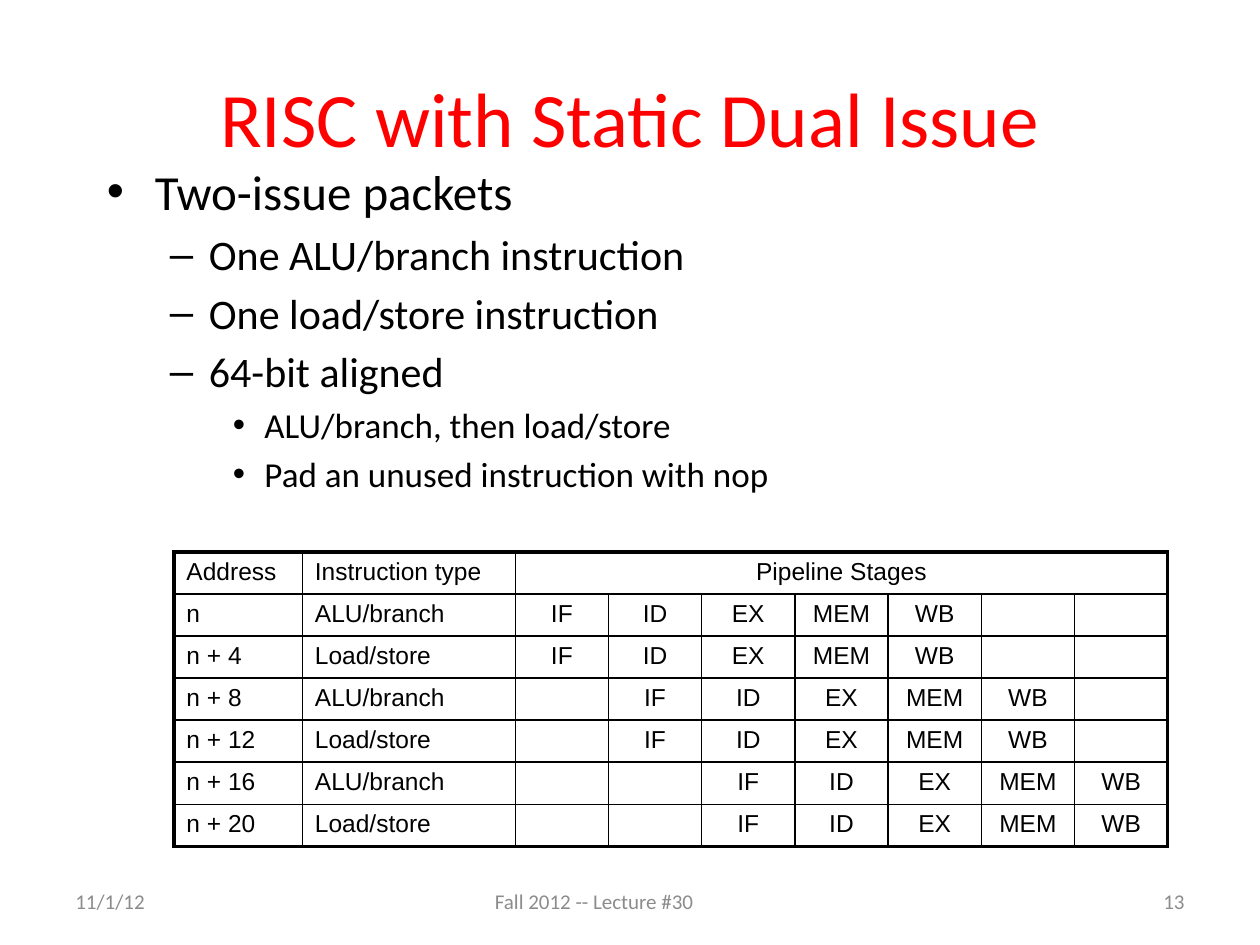
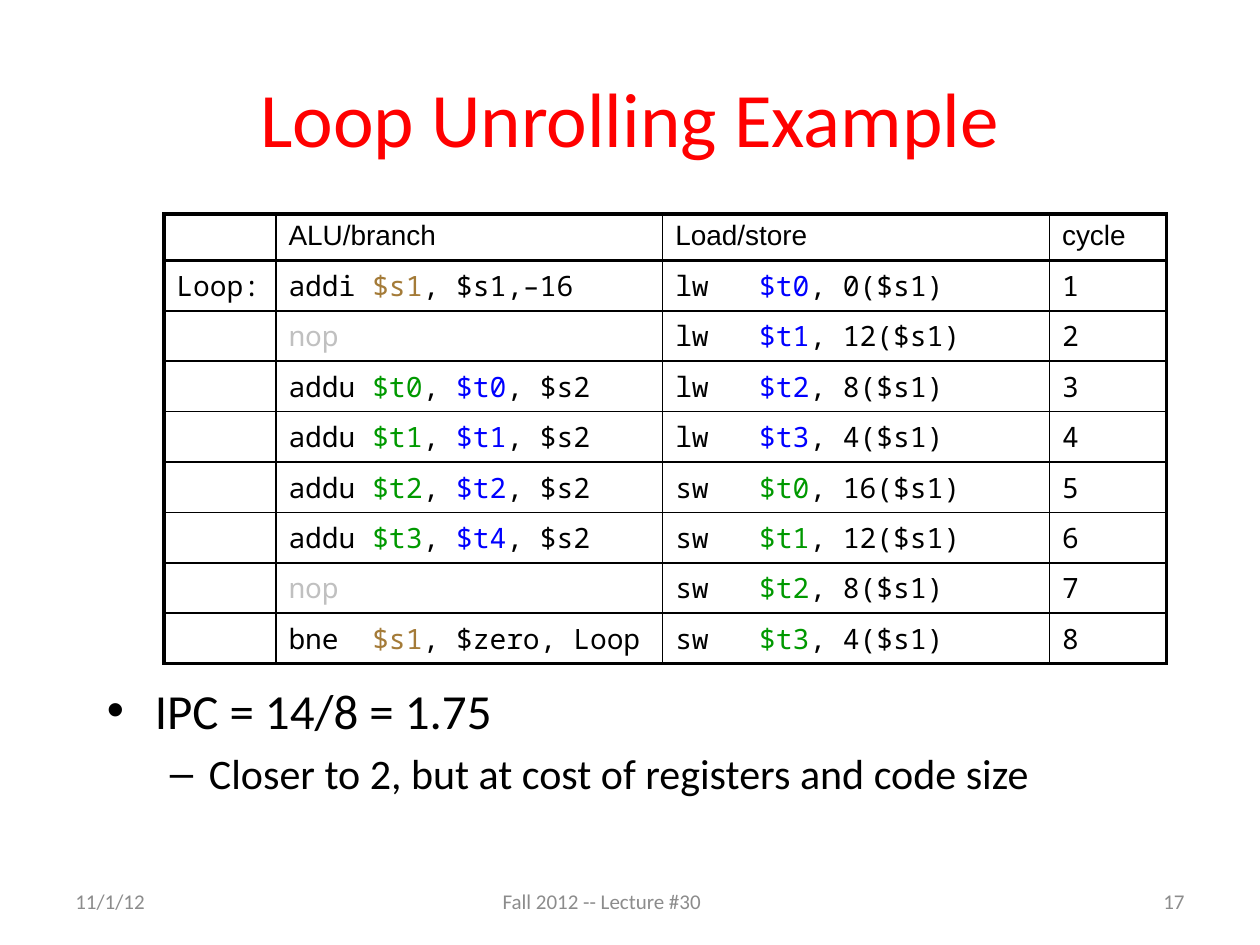
from lxml import etree
from pptx import Presentation
from pptx.dml.color import RGBColor
from pptx.enum.text import MSO_ANCHOR, PP_ALIGN
from pptx.oxml.ns import qn
from pptx.util import Inches, Pt

LEFT, CENTER, RIGHT = PP_ALIGN.LEFT, PP_ALIGN.CENTER, PP_ALIGN.RIGHT
TOP, MIDDLE = MSO_ANCHOR.TOP, MSO_ANCHOR.MIDDLE

BLACK = RGBColor(0x00, 0x00, 0x00)
RED = RGBColor(0xFF, 0x00, 0x00)
GRAY = RGBColor(0x8C, 0x8C, 0x8C)
CODE_COLORS = {
    "o": RGBColor(0xA4, 0x7B, 0x38),
    "b": RGBColor(0x00, 0x00, 0xFF),
    "g": RGBColor(0x00, 0x99, 0x00),
    "n": RGBColor(0xC0, 0xC0, 0xC0),
}

BODY_FONT, TABLE_FONT, CODE_FONT = "Calibri", "Arial", "Noto Sans Mono"
BULLETS = [("•", 0.38, 0.38, 28), ("–", 0.81, 0.31, 24), ("•", 1.25, 0.25, 20)]
OUTER, HEADER, INNER = 2.25, 1.5, 1

STAGES = ["IF", "ID", "EX", "MEM", "WB"]
STAGE_COLUMNS = 7
LOOP_CODE = [
    ("addi", "|o$s1|, $s1,–16", "lw", "|b$t0|, 0($s1)"),
    ("|nnop|", "", "lw", "|b$t1|, 12($s1)"),
    ("addu", "|g$t0|, |b$t0|, $s2", "lw", "|b$t2|, 8($s1)"),
    ("addu", "|g$t1|, |b$t1|, $s2", "lw", "|b$t3|, 4($s1)"),
    ("addu", "|g$t2|, |b$t2|, $s2", "sw", "|g$t0|, 16($s1)"),
    ("addu", "|g$t3|, |b$t4|, $s2", "sw", "|g$t1|, 12($s1)"),
    ("|nnop|", "", "sw", "|g$t2|, 8($s1)"),
    ("bne", "|o$s1|, $zero, Loop", "sw", "|g$t3|, 4($s1)"),
]


def write(p, text, size, font=BODY_FONT, color=BLACK, align=LEFT):
    """Fill a paragraph; a part such as |b$t0| takes the code colour b."""
    p.alignment = align
    for i, part in enumerate(text.split("|")):
        marked = i % 2 == 1
        if part:
            r = p.add_run()
            r.text = part[1:] if marked else part
            r.font.size, r.font.name = Pt(size), font
            r.font.color.rgb = CODE_COLORS[part[0]] if marked else color
    if not text:
        end = p._p.get_or_add_endParaRPr()
        end.set("sz", str(size * 100))
        etree.SubElement(end, qn("a:latin")).set("typeface", font)


def space_before(p, percent=20):
    """Put a share of the line height above a paragraph."""
    spacing = etree.SubElement(p._p.get_or_add_pPr(), qn("a:spcBef"))
    etree.SubElement(spacing, qn("a:spcPct")).set("val", str(percent * 1000))


def add_box(slide, box, anchor=TOP):
    """Add a wrapping text box and return its text frame."""
    tf = slide.shapes.add_textbox(*map(Inches, box)).text_frame
    tf.word_wrap = True
    tf.vertical_anchor = anchor
    return tf


def add_frame(prs, title, number, footer_left):
    """Add a slide with its title and footers."""
    slide = prs.slides.add_slide(prs.slide_layouts[6])
    tf = add_box(slide, (0.5, 0.3, 9, 1.25), MIDDLE)
    write(tf.paragraphs[0], title, 44, color=RED, align=CENTER)
    for left, text, align in [
        (0.5, "11/1/12", LEFT),
        (footer_left, "Fall 2012 -- Lecture #30", LEFT),
        (7.17, number, RIGHT),
    ]:
        tf = add_box(slide, (left, 6.95, 2.33, 0.4), MIDDLE)
        write(tf.paragraphs[0], text, 12, color=GRAY, align=align)
    return slide


def add_bullets(slide, box, items):
    """Add a bulleted list of (level, text) items."""
    tf = add_box(slide, box)
    for i, (level, text) in enumerate(items):
        p = tf.add_paragraph() if i else tf.paragraphs[0]
        bullet, margin, hang, size = BULLETS[level]
        p.level = level
        pPr = p._p.get_or_add_pPr()
        pPr.set("marL", str(Inches(margin)))
        pPr.set("indent", str(-Inches(hang)))
        space_before(p)
        etree.SubElement(pPr, qn("a:buFont")).set("typeface", "Arial")
        etree.SubElement(pPr, qn("a:buChar")).set("char", bullet)
        write(p, text, size)


def set_borders(cell, **widths):
    """Draw the black borders of a cell, keyed by side."""
    tcPr = cell._tc.get_or_add_tcPr()
    for side, width in widths.items():
        ln = etree.SubElement(tcPr, qn(f"a:ln{side}"), w=str(Pt(width)))
        fill = etree.SubElement(ln, qn("a:solidFill"))
        etree.SubElement(fill, qn("a:srgbClr")).set("val", str(BLACK))


def add_grid(slide, left, top, widths, heights, rows, size, code=False, centered_from=99):
    """Add a table with a heavy frame and a ruled header row."""
    box = (left, top, sum(widths), sum(heights))
    table = slide.shapes.add_table(len(rows), len(widths), *map(Inches, box)).table
    table.first_row = table.horz_banding = False
    for column, width in zip(table.columns, widths):
        column.width = Inches(width)
    for row, height in zip(table.rows, heights):
        row.height = Inches(height)
    if len(rows[0]) < len(widths):
        table.cell(0, len(rows[0]) - 1).merge(table.cell(0, len(widths) - 1))
    for i, texts in enumerate(rows):
        for j in range(len(widths)):
            cell = table.cell(i, j)
            last = j + cell.span_width == len(widths)
            set_borders(
                cell,
                L=INNER if j else OUTER,
                R=OUTER if last else INNER,
                T={0: OUTER, 1: HEADER}.get(i, INNER),
                B={0: HEADER, len(rows) - 1: OUTER}.get(i, INNER),
            )
            cell.fill.background()
            p = cell.text_frame.paragraphs[0]
            space_before(p)
            write(
                p,
                texts[j] if j < len(texts) else "",
                size,
                font=CODE_FONT if code and i else TABLE_FONT,
                align=CENTER if j >= centered_from else LEFT,
            )


def dual_issue_slide(prs):
    """Build the slide on two-issue packets and their pipeline stages."""
    slide = add_frame(prs, "RISC with Static Dual Issue", "13", 3.83)
    add_bullets(slide, (0.75, 1.23, 9.05, 3.02), [
        (0, "Two-issue packets"),
        (1, "One ALU/branch instruction"),
        (1, "One load/store instruction"),
        (1, "64-bit aligned"),
        (2, "ALU/branch, then load/store"),
        (2, "Pad an unused instruction with nop"),
    ])
    rows = [["Address", "Instruction type", "Pipeline Stages"]]
    for i in range(6):
        delay = i // 2
        address = f"n + {4 * i}" if i else "n"
        kind = "Load/store" if i % 2 else "ALU/branch"
        idle = [""] * (STAGE_COLUMNS - len(STAGES) - delay)
        rows.append([address, kind] + [""] * delay + STAGES + idle)
    widths = [1.02, 1.69] + [0.74] * STAGE_COLUMNS
    add_grid(slide, 1.38, 4.38, widths, [0.32] * len(rows), rows, 14, centered_from=2)


def loop_unrolling_slide(prs):
    """Build the slide with the schedule of the unrolled loop."""
    slide = add_frame(prs, "Loop Unrolling Example", "17", 3.89)
    add_bullets(slide, (0.75, 5.35, 9.05, 1.47), [
        (0, "IPC = 14/8 = 1.75"),
        (1, "Closer to 2, but at cost of registers and code size"),
    ])
    rows = [["", "ALU/branch", "Load/store", "cycle"]]
    for cycle, (alu, alu_args, mem, mem_args) in enumerate(LOOP_CODE, 1):
        label = "Loop:" if cycle == 1 else ""
        alu_code = f"{alu:<5}{alu_args}" if alu_args else alu
        rows.append([label, alu_code, f"{mem:<5}{mem_args}", str(cycle)])
    heights = [0.34] + [0.4] * len(LOOP_CODE)
    add_grid(slide, 1.3, 1.7, [0.89, 3.07, 3.07, 0.93], heights, rows, 16, code=True)


def main():
    """Build and save the presentation."""
    prs = Presentation()
    prs.slide_width, prs.slide_height = Inches(10), Inches(7.5)
    dual_issue_slide(prs)
    loop_unrolling_slide(prs)
    prs.save("out.pptx")


if __name__ == "__main__":
    main()
